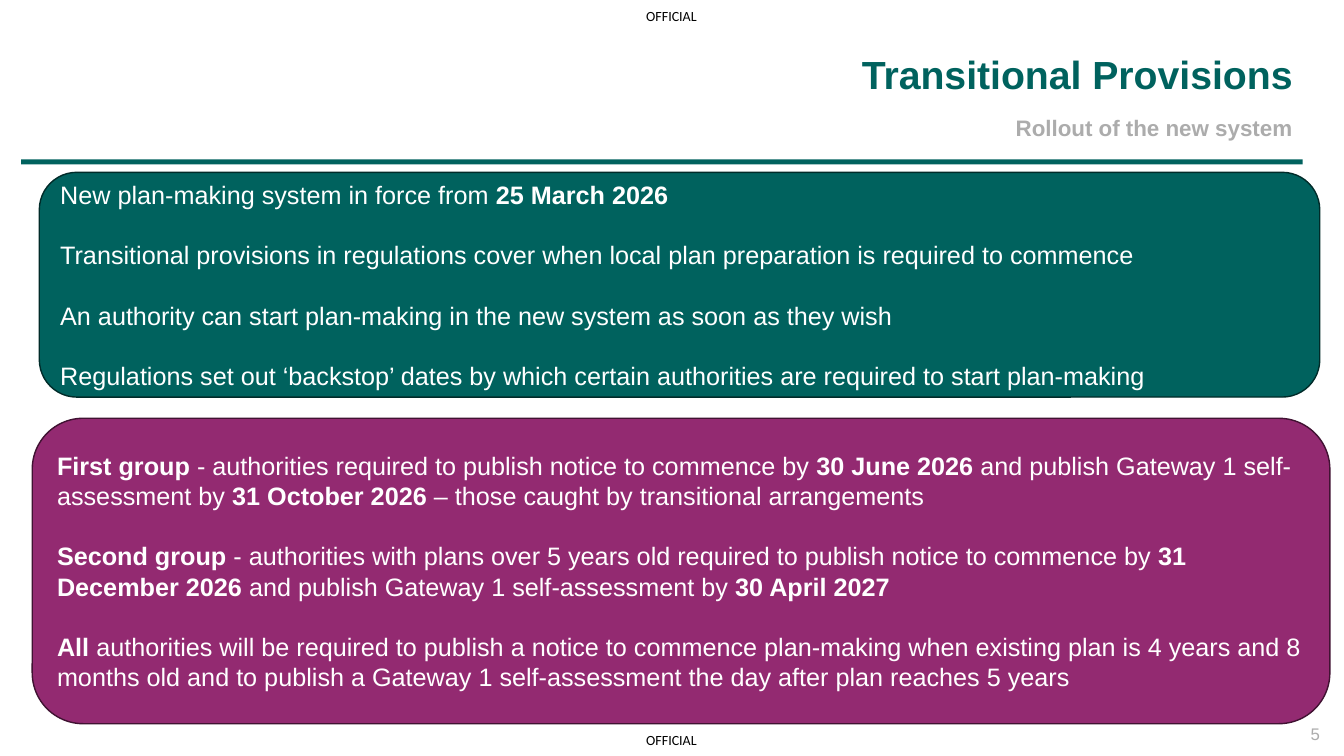
from dataclasses import dataclass

import pptx
import pptx.dml.color
import pptx.enum.shapes
import pptx.enum.text
import pptx.util

PX = 9144
COLOURS = {
    "teal": "00625E",
    "dark teal": "002B29",
    "plum": "932A71",
    "dark plum": "401232",
    "grey": "ACACAC",
    "white": "FFFFFF",
    "black": "000000",
}
ALIGN = pptx.enum.text.PP_ALIGN
ANCHOR = pptx.enum.text.MSO_ANCHOR
SHAPE = pptx.enum.shapes.MSO_SHAPE


@dataclass(frozen=True)
class Area:
    left: int
    top: int
    width: int
    height: int

    def emu(self) -> tuple[int, int, int, int]:
        return self.left * PX, self.top * PX, self.width * PX, self.height * PX


@dataclass(frozen=True)
class Panel:
    area: Area
    fill: str
    outline: str
    paragraphs: tuple[str, ...]


@dataclass(frozen=True)
class Label:
    area: Area
    text: str
    size: int
    colour: str
    font: str = "Arial"
    align: ALIGN = ALIGN.RIGHT
    anchor: ANCHOR = ANCHOR.TOP
    bold: bool = False
    wrap: bool = True
    line_spacing: float = 1.0


def rgb(name: str) -> pptx.dml.color.RGBColor:
    return pptx.dml.color.RGBColor.from_string(COLOURS[name])


def write(frame, *paragraphs: str, size: int, colour: str, font: str = "Arial",
          align: ALIGN = ALIGN.LEFT, anchor: ANCHOR = ANCHOR.MIDDLE, bold: bool = False,
          wrap: bool = True, line_spacing: float = 1.0, gap: float = 0) -> None:
    """Write paragraphs in which ** switches the weight."""
    frame.word_wrap = wrap
    frame.vertical_anchor = anchor
    for index, text in enumerate(paragraphs):
        paragraph = frame.add_paragraph() if index else frame.paragraphs[0]
        paragraph.alignment = align
        paragraph.line_spacing = line_spacing
        if index:
            paragraph.space_before = pptx.util.Pt(gap)
        for part, words in enumerate(text.split("**")):
            if words:
                run = paragraph.add_run()
                run.text = words
                run.font.name = font
                run.font.size = pptx.util.Pt(size)
                run.font.bold = bold != (part % 2 == 1)
                run.font.color.rgb = rgb(colour)


def add_block(slide, kind: SHAPE, area: Area, fill: str, outline: str | None = None):
    block = slide.shapes.add_shape(kind, *area.emu())
    block.shadow.inherit = False
    block.fill.solid()
    block.fill.fore_color.rgb = rgb(fill)
    if outline:
        block.line.color.rgb = rgb(outline)
        block.line.width = pptx.util.Pt(1)
    else:
        block.line.fill.background()
    return block


def add_label(slide, label: Label) -> None:
    frame = slide.shapes.add_textbox(*label.area.emu()).text_frame
    frame.margin_left = frame.margin_right = frame.margin_top = frame.margin_bottom = 0
    write(frame, label.text, size=label.size, colour=label.colour, font=label.font,
          align=label.align, anchor=label.anchor, bold=label.bold, wrap=label.wrap,
          line_spacing=label.line_spacing)


def add_panel(slide, panel: Panel) -> None:
    block = add_block(slide, SHAPE.ROUNDED_RECTANGLE, panel.area, panel.fill, panel.outline)
    write(block.text_frame, *panel.paragraphs, size=18, colour="white", gap=21.6)


MARKINGS = [
    Label(Area(641, top, 53, 17), "OFFICIAL", 10, "black", font="Calibri",
          align=ALIGN.LEFT, wrap=False)
    for top in (7, 726)
]
HEADINGS = [
    Label(Area(1247, 718, 62, 20), "5", 12, "grey", anchor=ANCHOR.MIDDLE),
    Label(Area(21, 116, 1261, 24), "Rollout of the new system", 16, "grey",
          bold=True, line_spacing=0.9),
    Label(Area(449, 55, 833, 42), "Transitional Provisions", 28, "teal",
          anchor=ANCHOR.BOTTOM, bold=True, line_spacing=0.9),
]
PANELS = [
    Panel(Area(39, 171, 1270, 223), "teal", "dark teal", (
        "New plan-making system in force from **25 March 2026**",
        "Transitional provisions in regulations cover when local plan preparation "
        "is required to commence",
        "An authority can start plan-making in the new system as soon as they wish",
        "Regulations set out ‘backstop’ dates by which certain authorities are "
        "required to start plan-making",
    )),
    Panel(Area(32, 415, 1287, 303), "plum", "dark plum", (
        "**First group **- authorities required to publish notice to commence by "
        "**30 June 2026 **and publish Gateway 1 self-assessment by "
        "**31 October 2026 **– those caught by transitional arrangements",
        "**Second group** - authorities with plans over 5 years old required to publish "
        "notice to commence by **31 December 2026** and publish Gateway 1 "
        "self-assessment by **30 April 2027**",
        "**All **authorities will be required to publish a notice to commence plan-making "
        "when existing plan is 4 years and 8 months old and to publish a Gateway 1 "
        "self-assessment the day after plan reaches 5 years",
    )),
]


def main() -> None:
    presentation = pptx.Presentation()
    presentation.slide_width = 1333 * PX
    presentation.slide_height = 750 * PX
    slide = presentation.slides.add_slide(presentation.slide_layouts[6])
    for marking in MARKINGS:
        add_label(slide, marking)
    add_block(slide, SHAPE.RECTANGLE, Area(21, 158, 1271, 5), "teal")
    for heading in HEADINGS:
        add_label(slide, heading)
    for panel in PANELS:
        add_panel(slide, panel)
    presentation.save("out.pptx")


if __name__ == "__main__":
    main()
